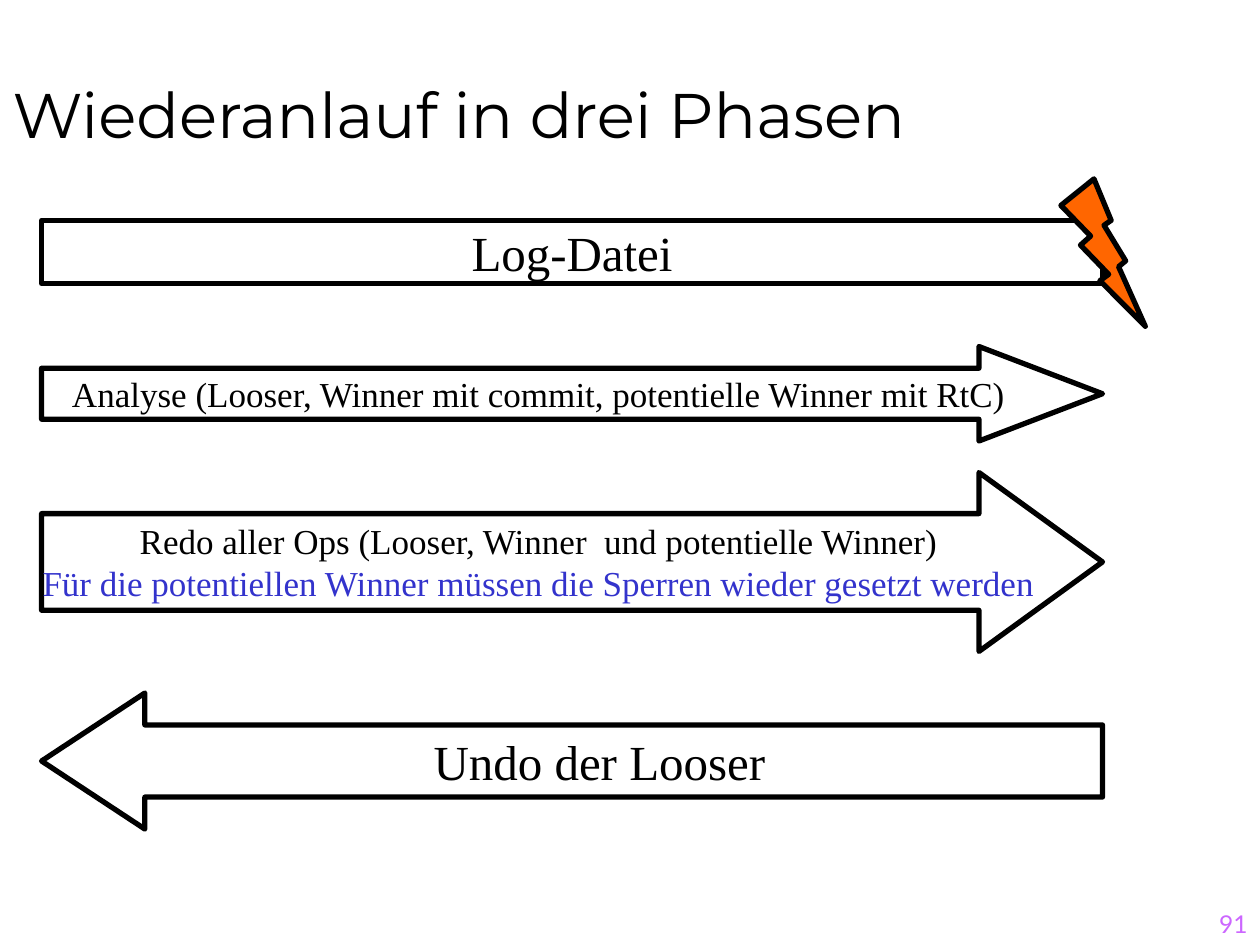
from pptx import Presentation
from pptx import util as u
from pptx.dml.color import RGBColor
from pptx.enum import shapes, text

BLACK = RGBColor(0x00, 0x00, 0x00)
BLUE = RGBColor(0x33, 0x33, 0xCC)
ORANGE = RGBColor(0xFF, 0x66, 0x00)
VIOLET = RGBColor(0xCC, 0x66, 0xFF)

KIND = shapes.MSO_SHAPE
ALIGN = text.PP_ALIGN
ANCHOR = text.MSO_ANCHOR

TITLE = "Wiederanlauf in drei Phasen"
PAGE_NUMBER = "91"
BAR_LEFT, BAR_WIDTH = 0.33, 8.42

# kind, top, height, shaft share, head length, text size, lines
BARS = [
    (KIND.RECTANGLE, 1.75, 0.5, None, None, 28, [("Log-Datei", BLACK)]),
    (KIND.RIGHT_ARROW, 2.75, 0.75, 0.54, 0.98, 20, [
        ("Analyse (Looser, Winner mit commit, potentielle Winner mit RtC)", BLACK),
    ]),
    (KIND.RIGHT_ARROW, 3.75, 1.42, 0.54, 0.98, 20, [
        ("Redo aller Ops (Looser, Winner  und potentielle Winner)", BLACK),
        ("Für die potentiellen Winner müssen die Sperren wieder gesetzt werden", BLUE),
    ]),
    (KIND.LEFT_ARROW, 5.5, 1.08, 0.53, 0.82, 28, [("Undo der Looser", BLACK)]),
]


def place(shape, left, top, width, height):
    shape.left, shape.top = u.Inches(left), u.Inches(top)
    shape.width, shape.height = u.Inches(width), u.Inches(height)


def write(frame, lines, font_name, size, align, anchor, wrap=True):
    frame.text = "\n".join(line for line, color in lines)
    frame.word_wrap = wrap
    frame.auto_size = text.MSO_AUTO_SIZE.NONE
    frame.vertical_anchor = anchor
    for paragraph, (line, color) in zip(frame.paragraphs, lines):
        paragraph.alignment = align
        font = paragraph.runs[0].font
        font.name, font.size = font_name, u.Pt(size)
        font.color.rgb = color


def add_outlined(slide, kind, left, top, width, height, fill=None):
    shape = slide.shapes.add_shape(kind, 0, 0, 0, 0)
    place(shape, left, top, width, height)
    shape.shadow.inherit = False
    shape.line.color.rgb = BLACK
    shape.line.width = u.Pt(3)
    if fill is None:
        shape.fill.background()
    else:
        shape.fill.solid()
        shape.fill.fore_color.rgb = fill
    return shape


def main():
    presentation = Presentation()
    presentation.slide_width, presentation.slide_height = u.Inches(10), u.Inches(7.5)
    slide = presentation.slides.add_slide(presentation.slide_layouts[5])

    title = slide.shapes.title
    place(title, 0, 0, 10, 1.25)
    write(title.text_frame, [(TITLE, BLACK)], "Montserrat", 36, ALIGN.LEFT, ANCHOR.BOTTOM)

    for kind, top, height, shaft, head, size, lines in BARS:
        bar = add_outlined(slide, kind, BAR_LEFT, top, BAR_WIDTH, height)
        if head:
            bar.adjustments[0] = shaft
            bar.adjustments[1] = head / height
        write(bar.text_frame, lines, "Times New Roman", size, ALIGN.CENTER, ANCHOR.MIDDLE, False)

    add_outlined(slide, KIND.LIGHTNING_BOLT, 8.42, 1.42, 0.67, 1.17, ORANGE)

    number = slide.shapes.add_textbox(0, 0, 0, 0)
    place(number, 7.92, 7, 2.08, 0.5)
    write(number.text_frame, [(PAGE_NUMBER, VIOLET)], "Lato", 14, ALIGN.RIGHT, ANCHOR.BOTTOM)

    presentation.save("out.pptx")


if __name__ == "__main__":
    main()
